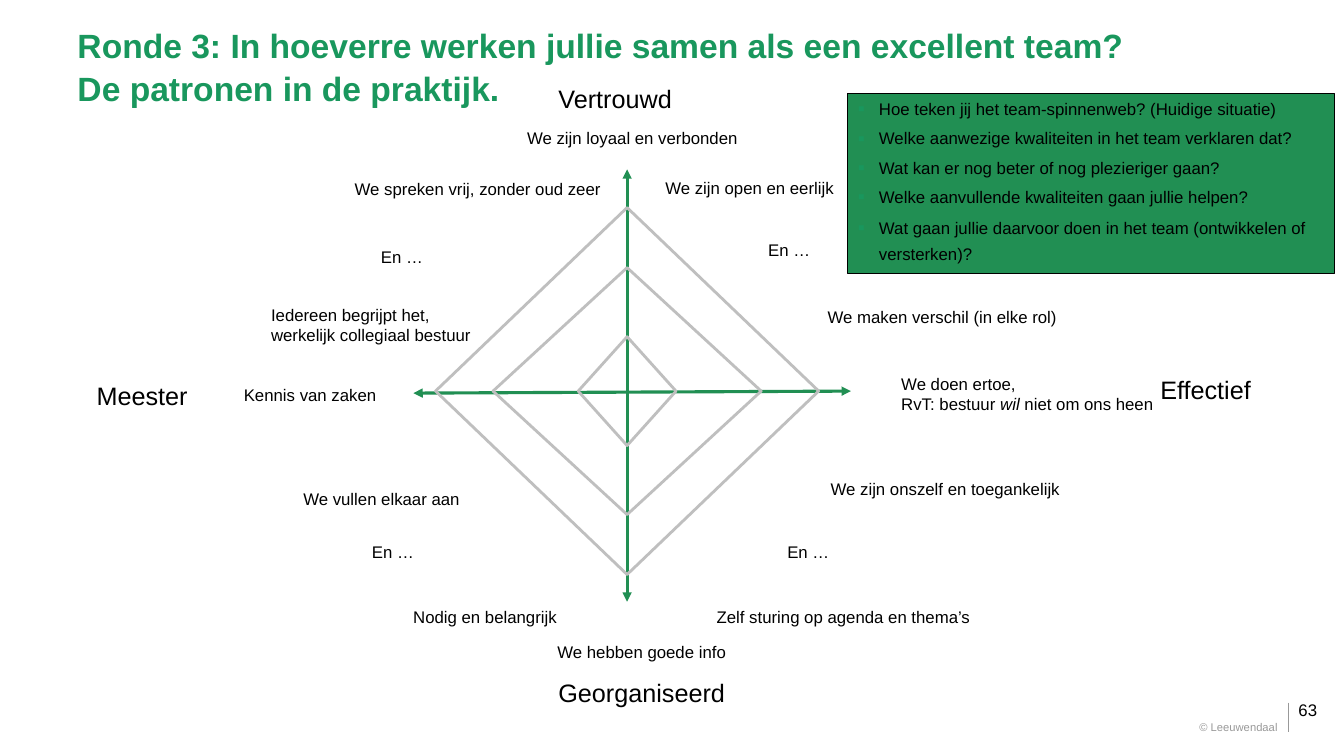
from lxml import etree
from pptx import Presentation
from pptx.dml.color import RGBColor
from pptx.enum.shapes import MSO_CONNECTOR, MSO_SHAPE
from pptx.enum.text import MSO_ANCHOR, PP_ALIGN
from pptx.oxml.ns import qn
from pptx.util import Inches, Pt

STRAIGHT = MSO_CONNECTOR.STRAIGHT
DIAMOND, RECTANGLE = MSO_SHAPE.DIAMOND, MSO_SHAPE.RECTANGLE
TOP, MIDDLE = MSO_ANCHOR.TOP, MSO_ANCHOR.MIDDLE
LEFT, RIGHT = PP_ALIGN.LEFT, PP_ALIGN.RIGHT

FONT = "Arial"
BLACK, GREEN, TITLE_GREEN = "000000", "218F53", "19975D"
WEB_GREY, FOOTER_GREY = "BFBFBF", "999999"

# Offsets from the centre of the web: left, top, width, text
AXIS_NAMES = [
    (-0.78, -3.1, 1.34, "Vertrouwd"),
    (5.19, -0.22, 1.11, "Effectief"),
    (-0.78, 2.79, 1.87, "Georganiseerd"),
    (-5.36, -0.16, 1.11, "Meester"),
]
STATEMENTS = [
    (-1.09, -2.66, 2.3, "We zijn loyaal en verbonden"),
    (0.28, -2.17, 1.89, "We zijn open en eerlijk"),
    (1.3, -1.55, 0.62, "En …"),
    (1.89, -0.89, 2.49, "We maken verschil (in elke rol)"),
    (2.62, -0.22, 2.72, "We doen ertoe,\nRvT: bestuur *wil* niet om ons heen"),
    (1.92, 0.82, 2.49, "We zijn onszelf en toegankelijk"),
    (1.49, 1.45, 0.62, "En …"),
    (0.79, 2.09, 2.74, "Zelf sturing op agenda en thema’s"),
    (-0.79, 2.44, 1.89, "We hebben goede info"),
    (-2.22, 2.09, 1.63, "Nodig en belangrijk"),
    (-2.63, 1.45, 0.62, "En …"),
    (-3.31, 0.92, 1.76, "We vullen elkaar aan"),
    (-3.9, -0.11, 1.53, "Kennis van zaken"),
    (-3.63, -0.91, 2.27, "Iedereen begrijpt het,\nwerkelijk collegiaal bestuur"),
    (-2.54, -1.48, 0.62, "En …"),
    (-2.8, -2.16, 2.66, "We spreken vrij, zonder oud zeer"),
]
WEB_RINGS = [(0.97, 1.08), (2.66, 2.45), (3.8, 3.64)]
QUESTIONS = [
    "Hoe teken jij het team-spinnenweb? (Huidige situatie)",
    "Welke aanwezige kwaliteiten in het team verklaren dat?",
    "Wat kan er nog beter of nog plezieriger gaan?",
    "Welke aanvullende kwaliteiten gaan jullie helpen?",
    "Wat gaan jullie daarvoor doen in het team (ontwikkelen of versterken)?",
]


def color(value):
    return RGBColor.from_string(value)


def write_paragraph(paragraph, text, size=12, font_color=BLACK, bold=False, align=LEFT):
    """Write text into a paragraph; words between asterisks become italic."""
    paragraph.alignment = align
    for index, part in enumerate(text.split("*")):
        run = paragraph.add_run()
        run.text = part
        run.font.name, run.font.size = FONT, Pt(size)
        run.font.bold = bold
        run.font.italic = index % 2 == 1
        run.font.color.rgb = color(font_color)


def add_text(slide, left, top, width, height, text, wrap=True, anchor=TOP,
             margin_y=0.05, line_spacing=None, **text_format):
    shape = slide.shapes.add_textbox(Inches(left), Inches(top), Inches(width), Inches(height))
    frame = shape.text_frame
    frame.word_wrap, frame.vertical_anchor = wrap, anchor
    frame.margin_top = frame.margin_bottom = Inches(margin_y)
    for index, line in enumerate(text.split("\n")):
        paragraph = frame.add_paragraph() if index else frame.paragraphs[0]
        paragraph.line_spacing = line_spacing
        write_paragraph(paragraph, line, **text_format)


def add_line(slide, start, end, line_color, width, arrows=False):
    line = slide.shapes.add_connector(STRAIGHT, *map(Inches, start + end))
    line.line.color.rgb, line.line.width = color(line_color), Pt(width)
    properties = line._element.spPr
    if arrows:
        outline = properties.find(qn("a:ln"))
        for tag in ("a:headEnd", "a:tailEnd"):
            etree.SubElement(outline, qn(tag), type="triangle")
    etree.SubElement(properties, qn("a:effectLst"))


def add_outlined_shape(slide, kind, left, top, width, height, line_color, line_width, fill=None):
    shape = slide.shapes.add_shape(kind, Inches(left), Inches(top), Inches(width), Inches(height))
    shape.shadow.inherit = False
    shape.line.color.rgb, shape.line.width = color(line_color), Pt(line_width)
    if fill:
        shape.fill.solid()
        shape.fill.fore_color.rgb = color(fill)
    else:
        shape.fill.background()
    return shape


def add_bullet(paragraph):
    properties = paragraph._p.get_or_add_pPr()
    properties.set("marL", str(Inches(0.21)))
    properties.set("indent", str(-Inches(0.21)))
    bullet_color = etree.SubElement(properties, qn("a:buClr"))
    etree.SubElement(bullet_color, qn("a:srgbClr"), val=TITLE_GREEN)
    etree.SubElement(properties, qn("a:buSzPct"), val="120000")
    etree.SubElement(properties, qn("a:buFont"), typeface=FONT)
    etree.SubElement(properties, qn("a:buChar"), char="▪")


def add_title(slide, left, top, width, height):
    add_text(slide, left, top, width, height,
             "Ronde 3: In hoeverre werken jullie samen als een excellent team?\n"
             "De patronen in de praktijk.",
             anchor=MIDDLE, line_spacing=1.06, size=24, font_color=TITLE_GREEN, bold=True)


def add_team_web(slide, center_x, center_y):
    # Axes
    add_line(slide, (center_x - 2.12, center_y + 0.02), (center_x + 2.22, center_y),
             GREEN, 2.25, arrows=True)
    add_line(slide, (center_x, center_y + 2.09), (center_x, center_y - 2.2),
             GREEN, 2.25, arrows=True)
    # Labels
    for labels, size, line_height in ((AXIS_NAMES, 18, 0.3), (STATEMENTS, 12, 0.2)):
        for left, top, width, text in labels:
            height = 0.1 + line_height * len(text.split("\n"))
            add_text(slide, center_x + left, center_y + top, width, height, text,
                     wrap=False, size=size)
    # Rings
    for width, height in WEB_RINGS:
        add_outlined_shape(slide, DIAMOND, center_x - width / 2, center_y - height / 2,
                           width, height, WEB_GREY, 2)


def add_questions(slide, left, top, width, height):
    panel = add_outlined_shape(slide, RECTANGLE, left, top, width, height, BLACK, 0.75, GREEN)
    frame = panel.text_frame
    frame.word_wrap, frame.vertical_anchor = True, TOP
    for index, question in enumerate(QUESTIONS):
        paragraph = frame.add_paragraph() if index else frame.paragraphs[0]
        add_bullet(paragraph)
        write_paragraph(paragraph, question)
        if index:
            paragraph.space_before = Pt(6.6)
    # The last question is set wider
    paragraph.space_before, paragraph.line_spacing = Pt(3.5), Pt(18.5)


def add_footer(slide, divider_x, top):
    add_text(slide, divider_x, top, 0.55, 0.2, "63", margin_y=0)
    add_line(slide, (divider_x, top + 0.03), (divider_x, top + 0.32), FOOTER_GREY, 0.75)
    add_text(slide, divider_x - 1.63, top + 0.21, 1.62, 0.13, "© Leeuwendaal",
             margin_y=0, size=8, font_color=FOOTER_GREY, align=RIGHT)


def main():
    presentation = Presentation()
    presentation.slide_width, presentation.slide_height = Inches(13.33), Inches(7.5)
    slide = presentation.slides.add_slide(presentation.slide_layouts[6])
    add_title(slide, 0.67, 0.19, 12.22, 0.91)
    add_team_web(slide, 6.22, 3.88)
    add_questions(slide, 8.41, 0.93, 4.83, 1.78)
    add_footer(slide, 12.78, 6.94)
    presentation.save("out.pptx")


if __name__ == "__main__":
    main()
